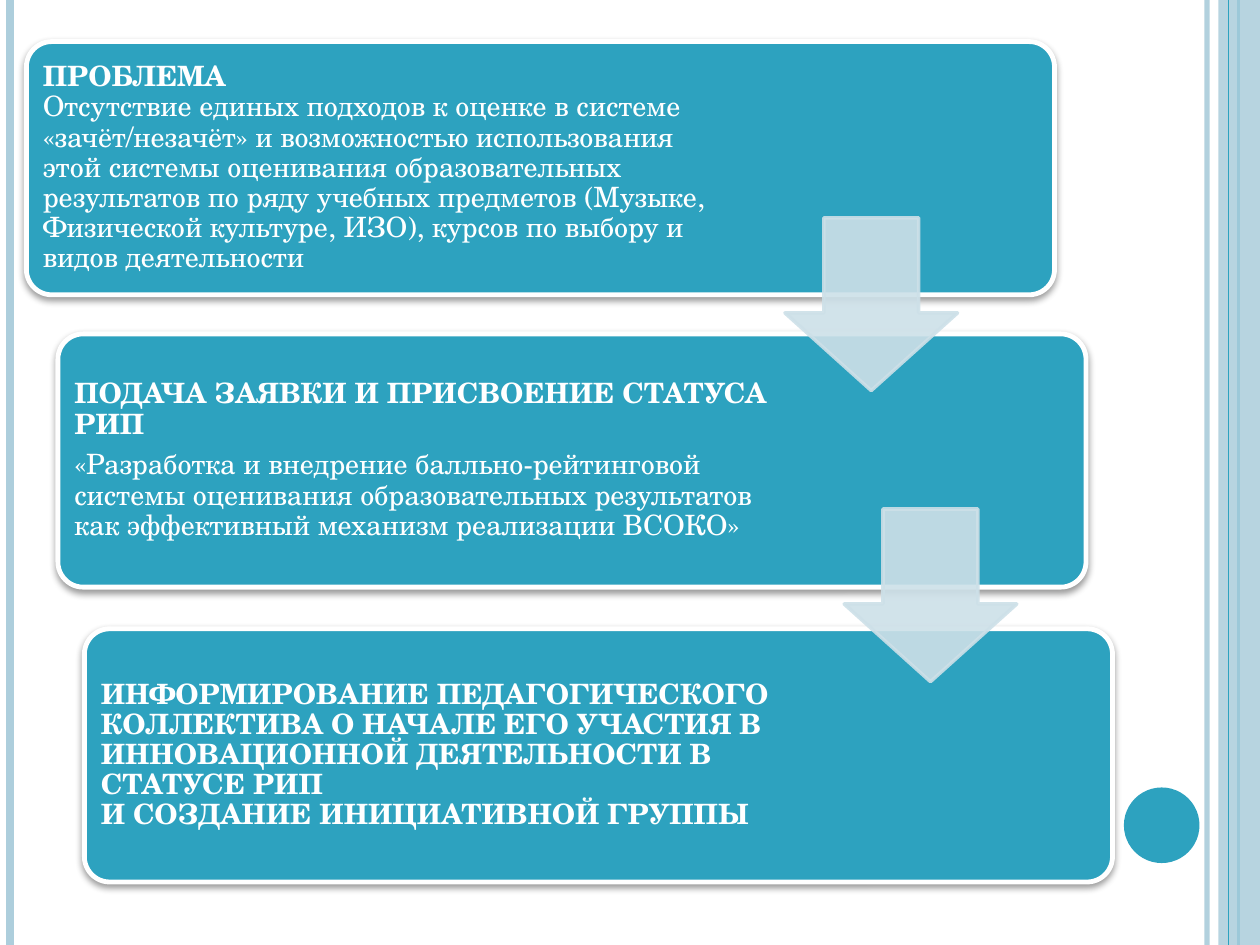
from lxml.etree import SubElement
from pptx import Presentation
from pptx.dml.color import RGBColor
from pptx.enum.shapes import MSO_CONNECTOR, MSO_SHAPE
from pptx.enum.text import MSO_ANCHOR, PP_ALIGN
from pptx.oxml.ns import qn
from pptx.util import Inches, Pt

FONT = "TeX Gyre Schola"
TEAL, PALE, MIST, WHITE = "2DA2BF", "ADCEDC", "CDE0E8", "FFFFFF"
SLIDE_W, SLIDE_H = 10, 7.5
CARD_W, CARD_H, CARD_PAD = 8.16, 2.01, 0.06
ARROW_SIZE = 1.37

STEPS = [
    {"at": (0.21, 0.33), "text_width": 5.66, "gap": 0, "paragraphs": [
        ("ПРОБЛЕМА", True),
        ("Отсутствие единых подходов к оценке в системе «зачёт/незачёт» и "
         "возможностью использования этой системы оценивания образовательных "
         "результатов по ряду учебных предметов (Музыке, Физической культуре, "
         "ИЗО), курсов по выбору и видов деятельности", False)]},
    {"at": (0.46, 2.65), "text_width": 5.81, "gap": 6, "paragraphs": [
        ("ПОДАЧА ЗАЯВКИ И ПРИСВОЕНИЕ СТАТУСА РИП", True),
        ("«Разработка и внедрение балльно-рейтинговой системы оценивания "
         "образовательных результатов как эффективный механизм реализации "
         "ВСОКО»", False)]},
    {"at": (0.67, 4.99), "text_width": 5.81, "gap": 0, "paragraphs": [
        ("ИНФОРМИРОВАНИЕ ПЕДАГОГИЧЕСКОГО КОЛЛЕКТИВА О НАЧАЛЕ ЕГО УЧАСТИЯ В "
         "ИННОВАЦИОННОЙ ДЕЯТЕЛЬНОСТИ В СТАТУСЕ РИП", True),
        ("И СОЗДАНИЕ ИНИЦИАТИВНОЙ ГРУППЫ", True)]},
]
ARROWS = [(6.23, 1.73), (6.7, 4.04)]


def color(hex_value):
    return RGBColor.from_string(hex_value)


def fade(item, opacity):
    for tint in item._element.spPr.iter(qn("a:srgbClr")):
        SubElement(tint, qn("a:alpha"), val=str(opacity * 1000))


def add_rule(slide, x, hex_value, weight, opacity=100):
    rule = slide.shapes.add_connector(
        MSO_CONNECTOR.STRAIGHT, Inches(x), 0, Inches(x), Inches(SLIDE_H))
    rule.line.color.rgb = color(hex_value)
    rule.line.width = Pt(weight)
    if opacity < 100:
        fade(rule, opacity)
    SubElement(rule._element.spPr, qn("a:effectLst"))


def add_figure(slide, preset, box, fill, outline=None, weight=0, adjustments=()):
    figure = slide.shapes.add_shape(preset, *map(Inches, box))
    figure.shadow.inherit = False
    figure.fill.solid()
    figure.fill.fore_color.rgb = color(fill)
    if outline:
        figure.line.color.rgb = color(outline)
        figure.line.width = Pt(weight)
    else:
        figure.line.fill.background()
    for index, value in enumerate(adjustments):
        figure.adjustments[index] = value
    return figure


def add_shadow(figure):
    effects = figure._element.spPr.find(qn("a:effectLst"))
    shadow = SubElement(effects, qn("a:outerShdw"), blurRad=str(Pt(4)),
                        dist=str(Pt(2)), dir="5400000", rotWithShape="0")
    tint = SubElement(shadow, qn("a:srgbClr"), val="000000")
    SubElement(tint, qn("a:alpha"), val="40000")


def add_step(slide, step):
    left, top = step["at"]
    card = add_figure(slide, MSO_SHAPE.ROUNDED_RECTANGLE,
                      (left, top, CARD_W, CARD_H), TEAL, WHITE, 2.75, [0.1])
    add_shadow(card)
    label = slide.shapes.add_textbox(
        Inches(left + CARD_PAD), Inches(top + CARD_PAD),
        Inches(step["text_width"]), Inches(CARD_H - 2 * CARD_PAD))
    frame = label.text_frame
    frame.word_wrap = True
    frame.vertical_anchor = MSO_ANCHOR.MIDDLE
    frame.margin_left = frame.margin_right = Inches(0.07)
    frame.margin_top = frame.margin_bottom = Inches(0.07)
    for index, (words, bold) in enumerate(step["paragraphs"]):
        paragraph = frame.add_paragraph() if index else frame.paragraphs[0]
        paragraph.alignment = PP_ALIGN.LEFT
        paragraph.line_spacing = 0.9
        paragraph.space_after = Pt(step["gap"])
        run = paragraph.add_run()
        run.text = words
        run.font.name = FONT
        run.font.size = Pt(16)
        run.font.bold = bold
        run.font.color.rgb = color(WHITE)


def main():
    deck = Presentation()
    deck.slide_width, deck.slide_height = Inches(SLIDE_W), Inches(SLIDE_H)
    slide = deck.slides.add_slide(deck.slide_layouts[6])
    slide.background.fill.solid()
    slide.background.fill.fore_color.rgb = color(WHITE)

    add_rule(slide, 9.58, PALE, 3, 93)
    add_rule(slide, 0.08, PALE, 4.5)
    add_rule(slide, 9.83, TEAL, 1.5)
    side_band = add_figure(slide, MSO_SHAPE.RECTANGLE,
                           (9.67, 0, 0.33, SLIDE_H), PALE)
    fade(side_band, 87)
    add_rule(slide, 9.75, TEAL, 0.75)
    add_figure(slide, MSO_SHAPE.OVAL, (8.92, 6.25, 0.6, 0.6), TEAL)

    for step in STEPS:
        add_step(slide, step)
    for left, top in ARROWS:
        arrow = add_figure(slide, MSO_SHAPE.DOWN_ARROW,
                           (left, top, ARROW_SIZE, ARROW_SIZE),
                           MIST, MIST, 2, [0.55, 0.45])
        fade(arrow, 90)

    deck.save("out.pptx")


if __name__ == "__main__":
    main()
